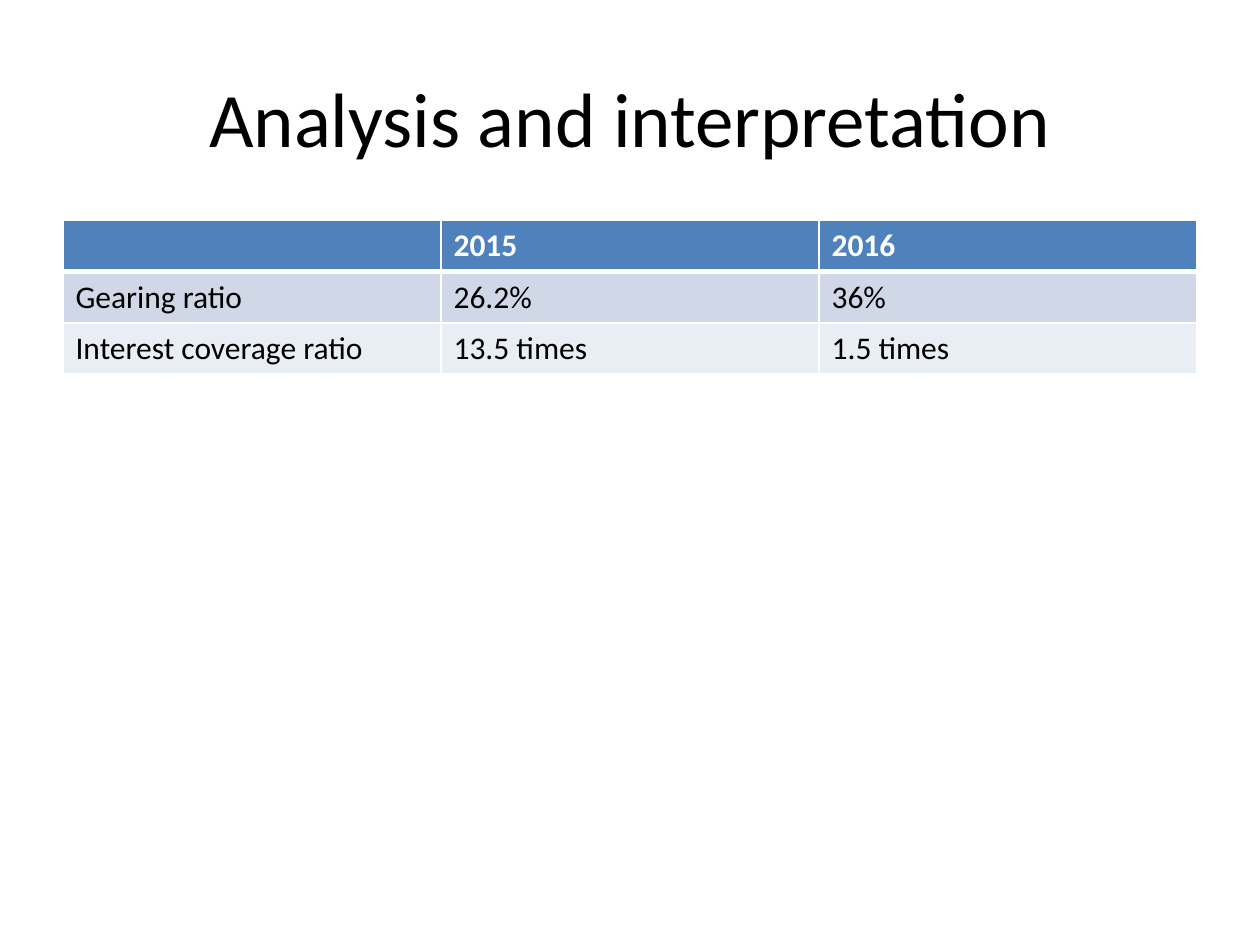
"""Build the slide comparing gearing and interest coverage ratios."""
from lxml.etree import SubElement
from pptx import Presentation
from pptx.dml.color import RGBColor
from pptx.enum.shapes import MSO_SHAPE
from pptx.enum.text import MSO_ANCHOR, PP_ALIGN
from pptx.oxml.ns import qn
from pptx.util import Inches, Pt

COLORS = {"head": "4F81BD", "odd": "D0D8E8", "even": "E9EDF4",
          "white": "FFFFFF", "black": "000000"}
ROWS = [
    ("", "2015", "2016"),
    ("Gearing ratio", "26.2%", "36%"),
    ("Interest coverage ratio", "13.5 times", "1.5 times"),
]
FILLS = ["head", "odd", "even"]


def style(para, size, color, bold=False):
    """Set the font of each run in a paragraph."""
    for run in para.runs:
        run.font.name = "Calibri"
        run.font.size = Pt(size)
        run.font.bold = bold
        run.font.color.rgb = RGBColor.from_string(COLORS[color])


def border(cell, side, width):
    """Draw a white line along one side of a cell."""
    props = cell._tc.get_or_add_tcPr()
    line = SubElement(props, qn(f"a:ln{side}"), w=str(Pt(width)))
    paint = SubElement(line, qn("a:solidFill"))
    SubElement(paint, qn("a:srgbClr"), val=COLORS["white"])


deck = Presentation()
deck.slide_width = Inches(10)
deck.slide_height = Inches(7.5)
slide = deck.slides.add_slide(deck.slide_layouts[6])

title = slide.shapes.add_shape(
    MSO_SHAPE.RECTANGLE, Inches(0.5), Inches(0.3), Inches(9), Inches(1.25)
)
title.shadow.inherit = False
title.fill.solid()
title.fill.fore_color.rgb = RGBColor.from_string(COLORS["white"])
title.line.fill.background()
frame = title.text_frame
frame.word_wrap = True
frame.vertical_anchor = MSO_ANCHOR.MIDDLE
frame.text = "Analysis and interpretation"
frame.paragraphs[0].alignment = PP_ALIGN.CENTER
style(frame.paragraphs[0], 44, "black")

table = slide.shapes.add_table(
    len(ROWS), len(ROWS[0]), Inches(0.5), Inches(1.75), Inches(9), Inches(1.22)
).table
for r, (row, fill) in enumerate(zip(ROWS, FILLS)):
    for c, text in enumerate(row):
        cell = table.cell(r, c)
        for side in "LRTB":
            thick = (r, side) in [(0, "B"), (1, "T")]
            border(cell, side, 3 if thick else 1)
        cell.fill.solid()
        cell.fill.fore_color.rgb = RGBColor.from_string(COLORS[fill])
        if text:
            cell.text_frame.text = text
            style(cell.text_frame.paragraphs[0], 18,
                  "black" if r else "white", bold=r == 0)

deck.save("out.pptx")
